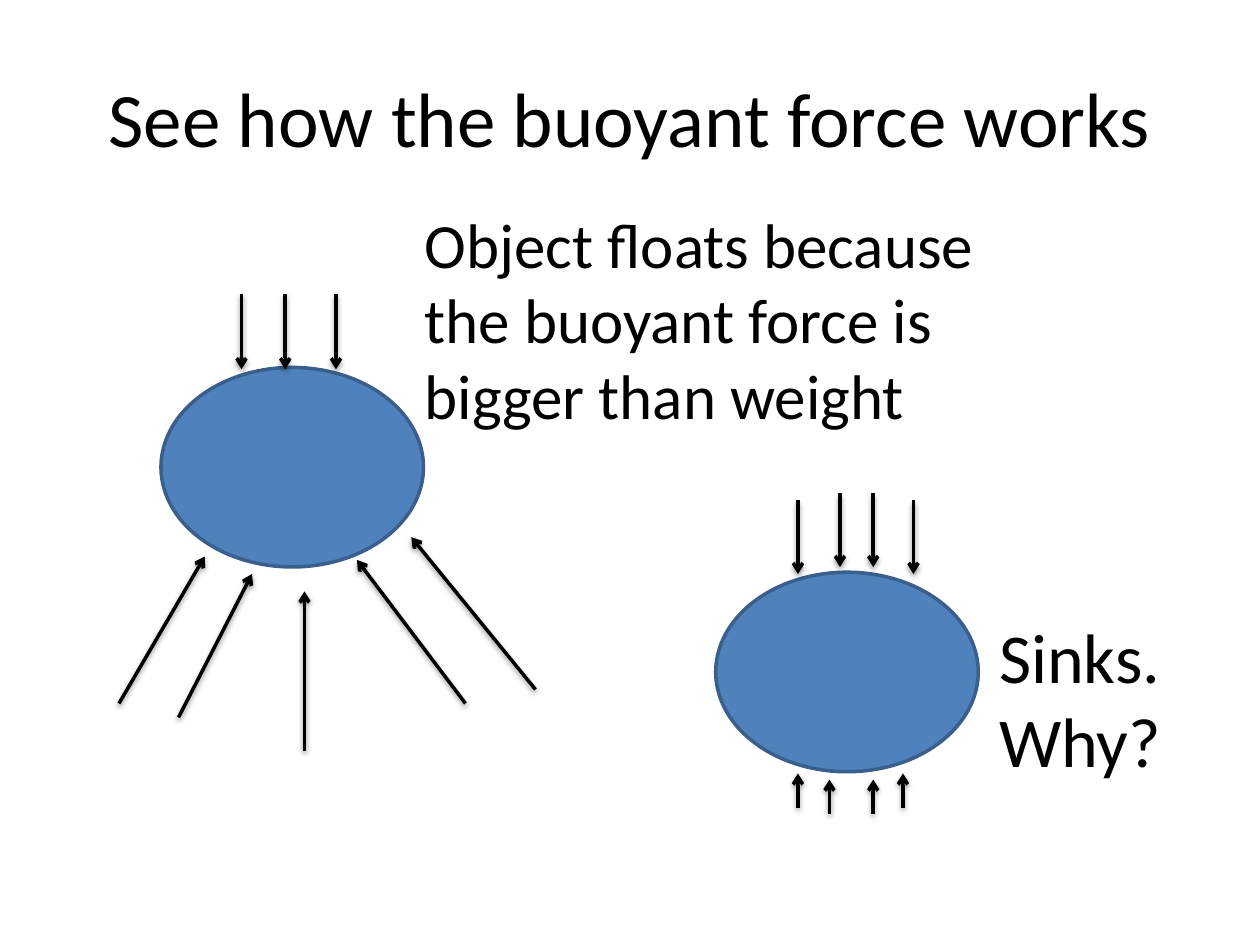
from lxml import etree
from pptx import Presentation
from pptx.dml.color import RGBColor
from pptx.enum.shapes import MSO_CONNECTOR, MSO_SHAPE
from pptx.enum.text import MSO_ANCHOR, PP_ALIGN
from pptx.oxml import parse_xml
from pptx.oxml.ns import nsdecls, qn
from pptx.util import Pt

STRAIGHT = MSO_CONNECTOR.STRAIGHT
OVAL = MSO_SHAPE.OVAL
MIDDLE = MSO_ANCHOR.MIDDLE
LEFT, CENTER = PP_ALIGN.LEFT, PP_ALIGN.CENTER

COLORS = {"text": "000000", "arrow": "000000", "object": "4F81BD", "outline": "3A5F8C"}
FONT = "Calibri"
LINE_WIDTH = 2
OBJECT_W, OBJECT_H = 150, 114

# Arrows are (tail x, tail y, head x, head y) from the object's top left corner.
FLOATING_ARROWS = [(x, -42, x, 1) for x in (46, 71, 100)] + [
    (-24, 192, 25, 108),
    (10, 200, 52, 118),
    (82, 219, 82, 128),
    (174, 192, 112, 110),
    (214, 184, 143, 97),
]
SINKING_ARROWS = [
    (x, top, x, top + 42) for x, top in ((47, -41), (71, -45), (90, -45), (113, -41))
] + [
    (x, bottom, x, bottom - 19.5)
    for x, bottom in ((47, 134.5), (65, 138), (90, 138), (107, 134.5))
]

SHADOW = (
    f'<a:effectLst {nsdecls("a")}><a:outerShdw blurRad="{Pt(3.1)}" dist="{Pt(1.6)}" '
    'dir="5400000" rotWithShape="0"><a:srgbClr val="000000"><a:alpha val="38000"/>'
    "</a:srgbClr></a:outerShdw></a:effectLst>"
)


def rgb(name):
    return RGBColor.from_string(COLORS[name])


def place(sp, box):
    for name, value in zip(("left", "top", "width", "height"), box):
        setattr(sp, name, Pt(value))


def write_text(tf, text, size, align=LEFT):
    tf.word_wrap = True
    p = tf.paragraphs[0]
    p.alignment = align
    r = p.add_run()
    r.text = text
    for name, value in {"name": FONT, "size": Pt(size)}.items():
        setattr(r.font, name, value)
    r.font.color.rgb = rgb("text")


def add_title(slide, box, text):
    sp = slide.shapes.title
    place(sp, box)
    sp.text_frame.vertical_anchor = MIDDLE
    write_text(sp.text_frame, text, 44, CENTER)


def add_caption(slide, box, text, size):
    sp = slide.shapes.add_textbox(*map(Pt, box))
    write_text(sp.text_frame, text, size)


def add_arrow(slide, x1, y1, x2, y2):
    sp = slide.shapes.add_connector(STRAIGHT, Pt(x1), Pt(y1), Pt(x2), Pt(y2))
    sp.line.width = Pt(LINE_WIDTH)
    sp.line.color.rgb = rgb("arrow")
    etree.SubElement(sp.line._get_or_add_ln(), qn("a:tailEnd"), type="arrow")
    sp._element.spPr.append(parse_xml(SHADOW))


def add_object(slide, left, top, arrows):
    """An oval object and the forces that press on it."""
    sp = slide.shapes.add_shape(OVAL, Pt(left), Pt(top), Pt(OBJECT_W), Pt(OBJECT_H))
    sp.shadow.inherit = False
    sp.fill.solid()
    sp.fill.fore_color.rgb = rgb("object")
    sp.line.color.rgb = rgb("outline")
    sp.line.width = Pt(LINE_WIDTH)
    for x1, y1, x2, y2 in arrows:
        add_arrow(slide, left + x1, top + y1, left + x2, top + y2)


def main():
    prs = Presentation()
    prs.slide_width, prs.slide_height = Pt(720), Pt(540)
    slide = prs.slides.add_slide(prs.slide_layouts[5])
    add_title(slide, (36, 21.6, 648, 90), "See how the buoyant force works")
    add_object(slide, 92, 210, FLOATING_ARROWS)
    add_object(slide, 409, 327, SINKING_ARROWS)
    add_caption(slide, (563.8, 347, 123, 104.4), "Sinks. Why?", 40)
    add_caption(
        slide,
        (235.5, 113.8, 382.3, 138.2),
        "Object floats because the buoyant force is bigger than weight",
        36,
    )
    prs.save("out.pptx")


if __name__ == "__main__":
    main()
